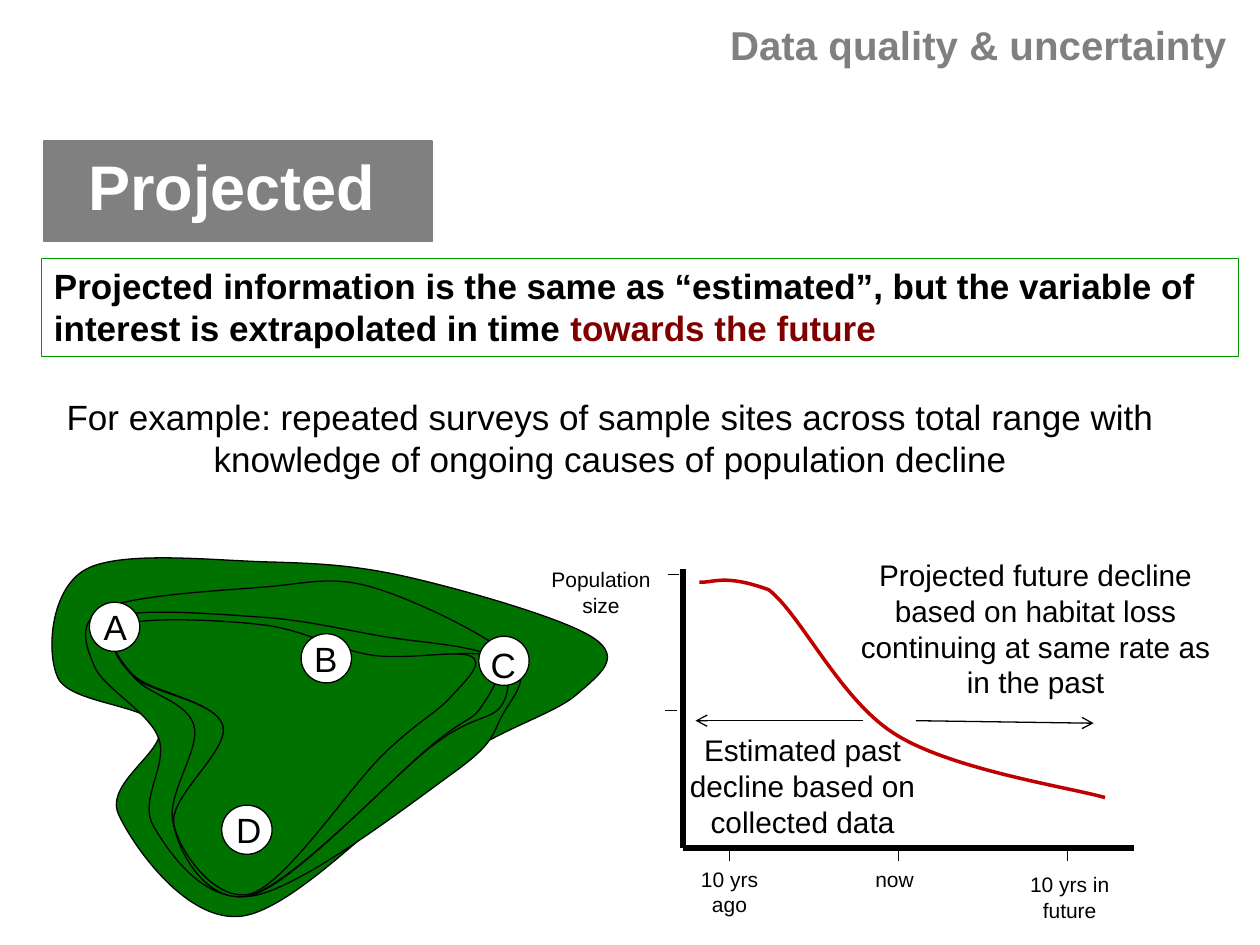
from lxml import etree
from pptx import Presentation
from pptx import util as u
from pptx.dml.color import RGBColor
from pptx.enum import shapes, text
from pptx.oxml.ns import qn

COLORS = {
    "black": "000000", "white": "FFFFFF", "grey": "808080", "frame": "009900",
    "forest": "007200", "maroon": "800000", "curve": "C00000",
}
GRID = 2.54  # one layout unit in centimetres

# Knots of the nested range outlines, outermost first
RANGES = [
    [(0.68, 0.52), (2.12, 0.46), (3.28, 0.59), (4.72, 1.07), (4.58, 1.51),
     (3.59, 2.05), (1.93, 3.27), (0.94, 2.46), (1.26, 1.77), (0.46, 1.38)],
    [(0.83, 0.83), (2.09, 0.66), (2.95, 0.66), (4.06, 1.22), (3.98, 1.69),
     (3.59, 2.14), (2.01, 3.11), (1.22, 2.56), (1.26, 1.86), (0.75, 1.29)],
    [(0.91, 0.9), (2.09, 0.9), (3.03, 1.05), (3.9, 1.21), (3.98, 1.6),
     (3.43, 1.92), (2.01, 3.1), (1.38, 2.55), (1.54, 1.76), (1.06, 1.37)],
    [(0.98, 0.98), (2.09, 0.98), (2.95, 1.21), (3.9, 1.21), (3.82, 1.61),
     (3.42, 1.92), (2, 3.1), (1.38, 2.55), (1.77, 1.76), (1.06, 1.37)],
    [(0.98, 0.96), (2.09, 0.96), (2.95, 1.2), (3.74, 1.21), (3.58, 1.53),
     (3.03, 2), (2, 3.09), (1.38, 2.54), (1.77, 1.76), (1.06, 1.36)],
]
# Letter, circle corner, label corner
SITES = [
    ("A", (0.71, 0.78), (0.64, 0.76)), ("B", (2.39, 1.03), (2.31, 1.01)),
    ("C", (3.8, 1.05), (3.72, 1.06)), ("D", (1.76, 2.39), (1.7, 2.37)),
]
# Start, then two handles and an end for each segment
DECLINE = [
    (1.55, 0.62), (1.66, 0.63), (1.74, 0.55), (2.1, 0.68), (2.36, 0.88),
    (2.67, 1.56), (3.11, 1.83), (3.56, 2.11), (4.49, 2.25), (4.77, 2.33),
]


def rgb(name):
    return RGBColor.from_string(COLORS[name])


def cm(units):
    return u.Cm(units * GRID)


def style(sp, fill=None, line="black", width=0.75):
    sp.shadow.inherit = False
    if fill:
        sp.fill.solid()
        sp.fill.fore_color.rgb = rgb(fill)
    else:
        sp.fill.background()
    sp.line.color.rgb = rgb(line)
    sp.line.width = u.Pt(width)


def write(tf, words, size, color="black", bold=False, align=text.PP_ALIGN.CENTER):
    tf.word_wrap = True
    p = tf.paragraphs[0]
    p.alignment = align
    p.font.name, p.font.size, p.font.bold = "Arial", u.Pt(size), bold
    p.font.color.rgb = rgb(color)
    p.add_run().text = words
    return p


def add_text(s, box, words, size, **look):
    x, y, w, h = map(cm, box)
    write(s.shapes.add_textbox(x, y, w, h).text_frame, words, size, **look)


def add_box(s, kind, box, **look):
    sp = s.shapes.add_shape(kind, *map(cm, box))
    style(sp, **look)
    return sp


def add_line(s, start, end, width=0.75, arrow=False):
    c = s.shapes.add_connector(shapes.MSO_CONNECTOR.STRAIGHT, *map(cm, start + end))
    c.line.color.rgb = rgb("black")
    c.line.width = u.Pt(width)
    if arrow:
        etree.SubElement(c.line._get_or_add_ln(), qn("a:tailEnd"), type="arrow")
    etree.SubElement(c._element.spPr, qn("a:effectLst"))


def smooth_loop(knots):
    """Bezier points of a closed Catmull-Rom curve through the knots."""
    n = len(knots)
    slopes = [tuple((b - a) / 6 for a, b in zip(knots[i - 1], knots[(i + 1) % n]))
              for i in range(n)]
    points = [knots[0]]
    for i, (x, y) in enumerate(knots):
        j = (i + 1) % n
        (ex, ey), (dx, dy), (gx, gy) = knots[j], slopes[i], slopes[j]
        points += [(x + dx, y + dy), (ex - gx, ey - gy), (ex, ey)]
    return points


def add_curve(s, x, y, points, closed=False, **look):
    """Draw a chain of cubic segments whose points are relative to (x, y)."""
    place = [(cm(x + px), cm(y + py)) for px, py in points]
    builder = s.shapes.build_freeform(*place[0])
    builder.add_line_segments(place[1:], close=closed)
    sp = builder.convert_to_shape()
    steps = list(sp._element.iter(qn("a:lnTo")))
    for i in range(0, len(steps), 3):
        cubic = etree.Element(qn("a:cubicBezTo"))
        steps[i].addprevious(cubic)
        for step in steps[i:i + 3]:
            cubic.append(step[0])
            step.getparent().remove(step)
    style(sp, **look)


def add_heading(s, box):
    x, y, w, h = box
    add_text(s, (x + 3.98, y + 0.11, 5.86, 0.49), "Data quality & uncertainty", 23,
             color="grey", bold=True, align=text.PP_ALIGN.RIGHT)
    banner = add_box(s, shapes.MSO_SHAPE.RECTANGLE, (x + 0.35, y + 1.12, 3.08, 0.8),
                     fill="grey", line="grey")
    tf = banner.text_frame
    tf.margin_left = cm(0.35)
    tf.vertical_anchor = text.MSO_ANCHOR.TOP
    write(tf, "Projected", 36, "white", True, text.PP_ALIGN.LEFT)


def add_definition(s, box):
    x, y, w, h = box
    sp = add_box(s, shapes.MSO_SHAPE.RECTANGLE, (x + 0.33, y, 9.5, 0.78), line="frame")
    sp.text_frame.vertical_anchor = text.MSO_ANCHOR.TOP
    p = write(sp.text_frame, "Projected information is the same as “estimated”, but the "
              "variable of interest is extrapolated in time ", 20, bold=True,
              align=text.PP_ALIGN.LEFT)
    r = p.add_run()
    r.text = "towards the future"
    r.font.color.rgb = rgb("maroon")
    add_text(s, (x - 0.04, y + 1.04, 9.77, 0.77),
             "For example: repeated surveys of sample sites across total range with "
             "knowledge of ongoing causes of population decline", 20)


def add_range_map(s, box):
    x, y, w, h = box
    for knots in RANGES:
        add_curve(s, x, y, smooth_loop(knots), closed=True, fill="forest")
    for letter, (cx, cy), (lx, ly) in SITES:
        add_box(s, shapes.MSO_SHAPE.OVAL, (x + cx, y + cy, 0.4, 0.39), fill="white")
        add_text(s, (x + lx, y + ly, 0.55, 0.44), letter, 20)


def add_decline_graph(s, box):
    x, y, w, h = box
    labels = [
        ((2.72, 0.37, 3, 1.25), "Projected future decline based on habitat loss "
         "continuing at same rate as in the past", 17),
        ((1.18, 1.76, 2.38, 0.96), "Estimated past decline based on collected data", 17),
        ((0.13, 0.45, 1.28, 0.59), "Population size", 12),
        ((1.39, 2.83, 0.8, 0.59), "10 yrs ago", 12),
        ((2.7, 2.83, 0.8, 0.35), "now", 12),
        ((3.96, 2.87, 1.06, 0.59), "10 yrs in future", 12),
    ]
    for (lx, ly, lw, lh), words, size in labels:
        add_text(s, (x + lx, y + ly, lw, lh), words, size)

    corner = (x + 1.42, y + 2.73)
    add_line(s, (x + 1.42, y + 0.52), corner, width=3)
    add_line(s, corner, (x + 5, y + 2.73), width=3)
    for tx, ty in [(1.39, 0.56), (1.37, 1.64)]:
        add_line(s, (x + tx, y + ty), (x + tx - 0.09, y + ty))
    for i in range(3):
        tx = x + 1.79 + 1.34 * i
        add_line(s, (tx, y + 2.71), (tx, y + 2.83))

    add_line(s, (x + 2.85, y + 1.72), (x + 1.52, y + 1.72), arrow=True)
    add_line(s, (x + 3.27, y + 1.72), (x + 4.68, y + 1.74), arrow=True)
    add_curve(s, x, y, DECLINE, line="curve", width=2)


def main():
    prs = Presentation()
    prs.slide_width, prs.slide_height = cm(10), cm(7.5)
    s = prs.slides.add_slide(prs.slide_layouts[6])
    add_heading(s, (0, 0, 10, 2))
    add_definition(s, (0, 2.05, 10, 1.9))
    add_range_map(s, (0, 4, 5, 3.5))
    add_decline_graph(s, (4, 4, 6, 3.5))
    prs.save("out.pptx")


if __name__ == "__main__":
    main()
